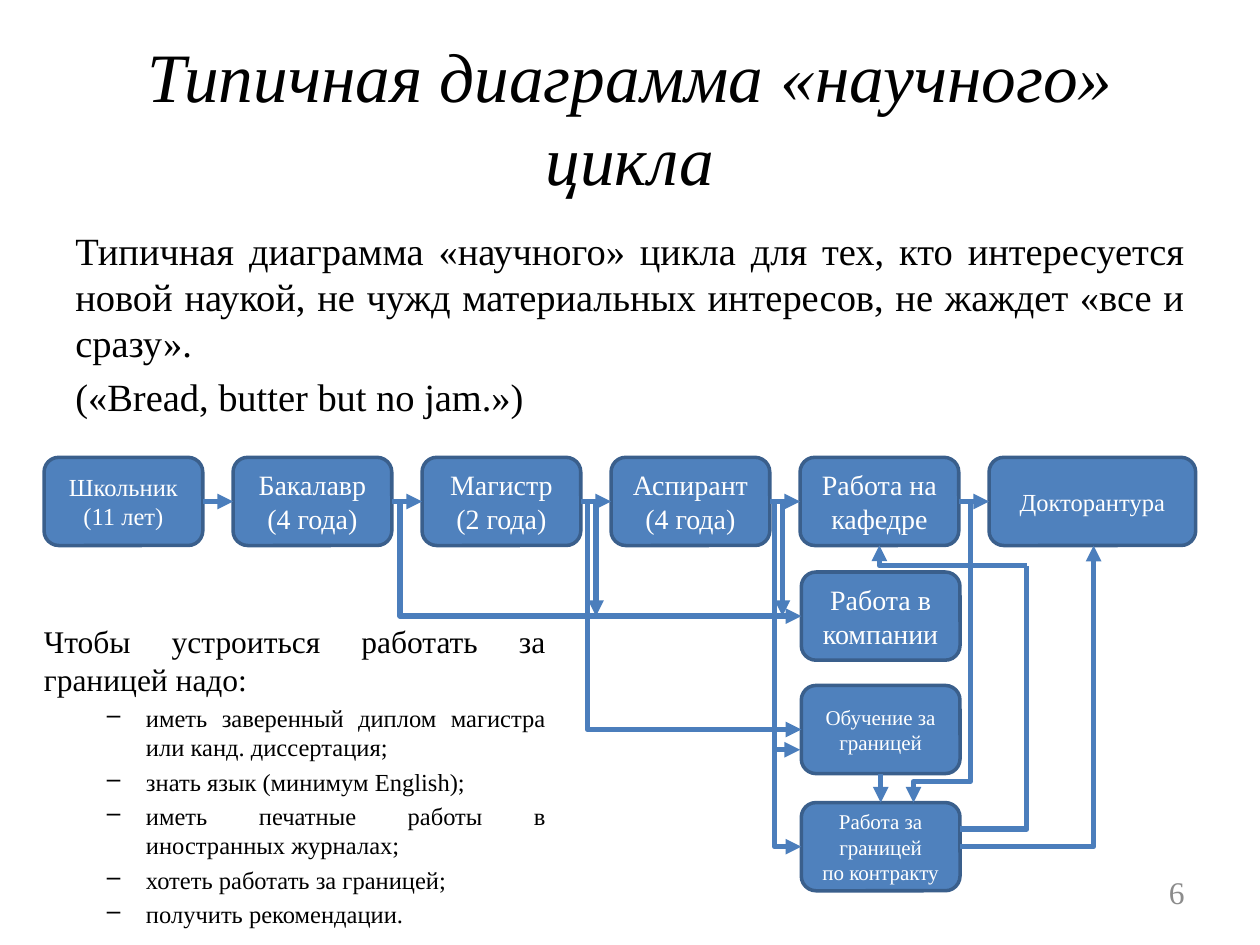
from lxml import etree
from pptx import Presentation
from pptx.dml.color import RGBColor
from pptx.enum import shapes, text
from pptx.oxml import ns
from pptx.util import Inches, Pt

FONT = "Times New Roman"
BLACK = RGBColor(0, 0, 0)
WHITE = RGBColor(255, 255, 255)
GREY = RGBColor(0x8C, 0x8C, 0x8C)
BOX_FILL = RGBColor(0x4F, 0x81, 0xBD)
BOX_LINE = RGBColor(0x3A, 0x5F, 0x8C)
ARROW = RGBColor(0x4B, 0x7E, 0xBC)
CENTER, RIGHT = text.PP_ALIGN.CENTER, text.PP_ALIGN.RIGHT
LEFT, JUSTIFY = text.PP_ALIGN.LEFT, text.PP_ALIGN.JUSTIFY
TOP, MIDDLE = text.MSO_ANCHOR.TOP, text.MSO_ANCHOR.MIDDLE

TITLE = "Типичная диаграмма «научного» цикла"
INTRO = [
    "Типичная диаграмма «научного» цикла для тех, кто интересуется новой наукой, "
    "не чужд материальных интересов, не жаждет «все и сразу».",
    "(«Bread, butter but no jam.»)",
]
ABROAD_HEADING = "Чтобы устроиться работать за границей надо:"
ABROAD_NEEDS = [
    "иметь заверенный диплом магистра или канд. диссертация;",
    "знать язык (минимум English);",
    "иметь печатные работы в иностранных журналах;",
    "хотеть работать за границей;",
    "получить рекомендации.",
]
PAGE_NUMBER = "6"

# Key, paragraphs, text size
CAREER = [
    ("school", ["Школьник", "(11 лет)"], 14),
    ("bachelor", ["Бакалавр", "(4 года)"], 16),
    ("master", ["Магистр", "(2 года)"], 16),
    ("postgraduate", ["Аспирант", "(4 года)"], 16),
    ("department", ["Работа на кафедре"], 16),
    ("doctoral", ["Докторантура"], 14),
]
# Key, paragraphs, text size, top
ALTERNATIVES = [
    ("company", ["Работа в компании"], 16, 4.54),
    ("study", ["Обучение за границей"], 12, 5.44),
    ("contract", ["Работа за границей", "по контракту"], 12, 6.37),
]
ROW_LEFT, ROW_TOP, ROW_STEP = 0.35, 3.63, 1.5
BOX_W, BOX_H, DOCTORAL_W = 1.26, 0.7, 1.64
ALTERNATIVE_LEFT = 6.36

ROW_MID = ROW_TOP + BOX_H / 2
ROW_BOTTOM = ROW_TOP + BOX_H
COMPANY_MID, STUDY_MID, CONTRACT_MID = (
    top + BOX_H / 2 for *_, top in ALTERNATIVES)
ALTERNATIVE_RIGHT = ALTERNATIVE_LEFT + BOX_W

# Start, end, position of the bend (None: a single corner), options
ELBOWS = [
    ((3.11, ROW_MID), (ALTERNATIVE_LEFT, COMPANY_MID), 0.02, {}),
    ((4.61, ROW_MID), (4.73, COMPANY_MID), None, {}),
    ((4.61, ROW_MID), (ALTERNATIVE_LEFT, STUDY_MID), 0.03, {}),
    ((6.11, ROW_MID), (ALTERNATIVE_LEFT, CONTRACT_MID), 0.15, {}),
    ((7.7, ROW_MID), (7.25, 6.37), 0.93, {"down_first": True}),
    ((ALTERNATIVE_RIGHT, CONTRACT_MID), (8.68, ROW_BOTTOM), None, {}),
    ((ALTERNATIVE_RIGHT, 6.58), (8.15, 4.49), None, {"arrow": False}),
    ((8.15, 4.49), (6.98, ROW_BOTTOM), None, {}),
]
STRAIGHTS = [
    ((6.21, ROW_MID), (6.21, COMPANY_MID)),
    ((6.14, 5.95), (6.35, 5.95)),
]


def write(frame, paragraphs, size, color=BLACK, align=LEFT, anchor=TOP,
          italic=False, space=0, bullet=None):
    """Append paragraphs to a text frame, using its first one if still empty."""
    frame.word_wrap = True
    frame.auto_size = text.MSO_AUTO_SIZE.NONE
    frame.vertical_anchor = anchor
    for words in paragraphs:
        para = frame.paragraphs[0]
        if para.runs:
            para = frame.add_paragraph()
        para.alignment = align
        para.space_before = Pt(space)
        run = para.add_run()
        run.text = words
        run.font.name = FONT
        run.font.size = Pt(size)
        run.font.italic = italic
        run.font.color.rgb = color
        if bullet:
            para.level = 1
            props = para._p.get_or_add_pPr()
            props.set("marL", str(Inches(0.81)))
            props.set("indent", str(Inches(-0.31)))
            etree.SubElement(props, ns.qn("a:buChar")).set("char", bullet)


def add_text(slide, left, top, width, height):
    return slide.shapes.add_textbox(
        Inches(left), Inches(top), Inches(width), Inches(height)).text_frame


def add_box(slide, words, size, left, top, width=BOX_W):
    box = slide.shapes.add_shape(
        shapes.MSO_SHAPE.ROUNDED_RECTANGLE,
        Inches(left), Inches(top), Inches(width), Inches(BOX_H))
    box.shadow.inherit = False
    box.fill.solid()
    box.fill.fore_color.rgb = BOX_FILL
    box.line.color.rgb = BOX_LINE
    box.line.width = Pt(2)
    write(box.text_frame, words, size, WHITE, CENTER, MIDDLE)
    return box


def add_line(slide, start, end, kind=shapes.MSO_CONNECTOR.STRAIGHT, arrow=True):
    line = slide.shapes.add_connector(
        kind, *(Inches(value) for value in (*start, *end)))
    line.line.color.rgb = ARROW
    line.line.width = Pt(3)
    if arrow:
        etree.SubElement(line.line._get_or_add_ln(),
                         ns.qn("a:tailEnd")).set("type", "triangle")
    etree.SubElement(line._element.spPr, ns.qn("a:effectLst"))
    return line


def add_elbow(slide, start, end, bend, down_first=False, arrow=True):
    """Draw a bent connector; down_first turns its frame by a quarter."""
    (x1, y1), (x2, y2) = start, end
    if down_first:
        mid_x, mid_y = (x1 + x2) / 2, (y1 + y2) / 2
        half_w, half_h = (y2 - y1) / 2, (x1 - x2) / 2
        start = mid_x - half_w, mid_y - half_h
        end = mid_x + half_w, mid_y + half_h
    elbow = add_line(slide, start, end, shapes.MSO_CONNECTOR.ELBOW, arrow)
    props = elbow._element.spPr
    if down_first:
        props.find(ns.qn("a:xfrm")).set("rot", str(90 * 60000))
    geometry = props.find(ns.qn("a:prstGeom"))
    if bend is None:
        geometry.set("prst", "bentConnector2")
    else:
        guide = etree.SubElement(geometry.find(ns.qn("a:avLst")), ns.qn("a:gd"))
        guide.set("name", "adj1")
        guide.set("fmla", f"val {round(bend * 100000)}")


def join(slide, source, source_side, target, target_side):
    arrow = add_line(slide, (0, 0), (1, 1))
    arrow.begin_connect(source, source_side)
    arrow.end_connect(target, target_side)


def main():
    deck = Presentation()
    deck.slide_width, deck.slide_height = Inches(10), Inches(7.5)
    slide = deck.slides.add_slide(deck.slide_layouts[5])

    title = slide.shapes.title
    title.left, title.top = Inches(0.5), Inches(0.3)
    title.width, title.height = Inches(9), Inches(1.25)
    write(title.text_frame, [TITLE], 39.6, align=CENTER, anchor=MIDDLE, italic=True)

    write(add_text(slide, 0.5, 1.75, 9, 1.69), INTRO, 22, align=JUSTIFY, space=4.4)
    write(add_text(slide, 7.17, 6.95, 2.33, 0.25), [PAGE_NUMBER], 18, GREY,
          RIGHT, MIDDLE)

    boxes = {}
    for column, (key, words, size) in enumerate(CAREER):
        width = DOCTORAL_W if key == "doctoral" else BOX_W
        boxes[key] = add_box(slide, words, size, ROW_LEFT + column * ROW_STEP,
                             ROW_TOP, width)
    for key, words, size, top in ALTERNATIVES:
        boxes[key] = add_box(slide, words, size, ALTERNATIVE_LEFT, top)

    career = [boxes[key] for key, *_ in CAREER]
    for source, target in zip(career, career[1:]):
        join(slide, source, 3, target, 1)
    join(slide, boxes["study"], 2, boxes["contract"], 0)
    for start, end in STRAIGHTS:
        add_line(slide, start, end)
    for start, end, bend, options in ELBOWS:
        add_elbow(slide, start, end, bend, **options)

    abroad = add_text(slide, 0.25, 4.89, 4.18, 2.28)
    write(abroad, [ABROAD_HEADING], 18, align=JUSTIFY, space=3.6)
    write(abroad, ABROAD_NEEDS, 14, align=JUSTIFY, space=2.8, bullet="–")

    deck.save("out.pptx")


if __name__ == "__main__":
    main()
